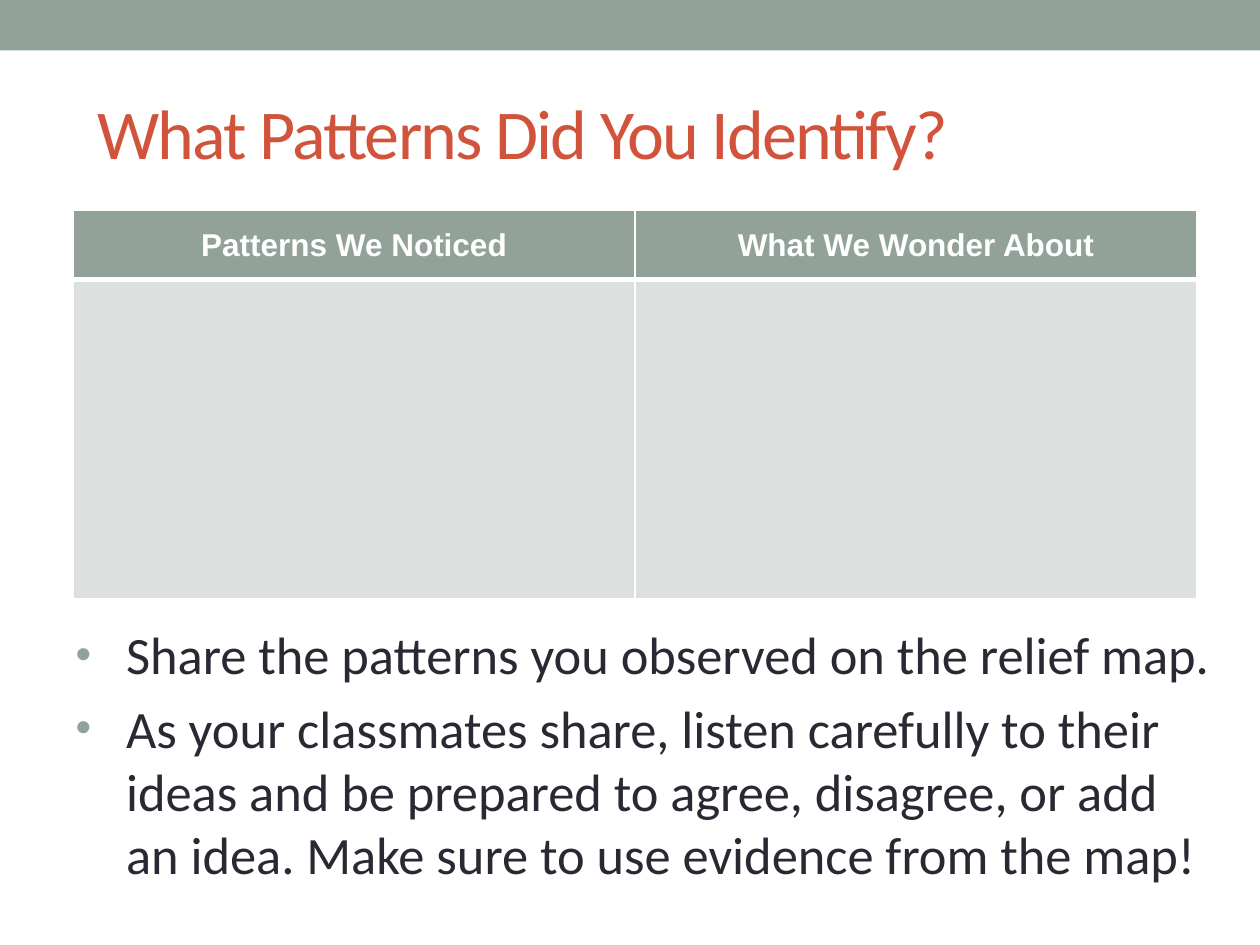
from lxml.etree import SubElement
from pptx import Presentation
from pptx.dml.color import RGBColor
from pptx.enum.shapes import MSO_SHAPE
from pptx.enum.text import MSO_ANCHOR, MSO_AUTO_SIZE, PP_ALIGN
from pptx.oxml import parse_xml
from pptx.oxml.ns import nsdecls, qn
from pptx.util import Inches, Pt

SAGE = RGBColor(0x93, 0xA2, 0x99)
PALE = RGBColor(0xDC, 0xE0, 0xDE)
RUST = RGBColor(0xD2, 0x53, 0x3C)
INK = RGBColor(0x29, 0x29, 0x34)
WHITE = RGBColor(0xFF, 0xFF, 0xFF)

HEADS = ["Patterns We Noticed", "What We Wonder About"]
TASKS = [
    "Share the patterns you observed on the relief map.",
    "As your classmates share, listen carefully to their ideas and be prepared "
    "to agree, disagree, or add an idea. Make sure to use evidence from the map!",
]


def write(para, text, font="Calibri", size=30, color=INK, bold=False,
          align=PP_ALIGN.LEFT, track=0, before=0):
    para.alignment = align
    para.space_before = Pt(before)
    run = para.add_run()
    run.text = text
    run.font.name = font
    run.font.size = Pt(size)
    run.font.bold = bold
    run.font.color.rgb = color
    if track:
        run.font._element.set("spc", str(track * 100))


def place(shape, box):
    shape.left, shape.top, shape.width, shape.height = map(Inches, box)


def bullet(para, indent):
    props = para._p.get_or_add_pPr()
    props.set("marL", str(Inches(indent)))
    props.set("indent", str(-Inches(indent)))
    tint = SubElement(props, qn("a:buClr"))
    SubElement(tint, qn("a:srgbClr"), val=str(SAGE))
    SubElement(props, qn("a:buSzPct"), val="85000")
    SubElement(props, qn("a:buFont"), typeface="Arial")
    SubElement(props, qn("a:buChar"), char="•")


def border(cell, sides):
    props = cell._tc.get_or_add_tcPr()
    for spot, (side, width) in enumerate(sides.items()):
        props.insert(spot, parse_xml(
            f'<a:ln{side} {nsdecls("a")} w="{Pt(width)}"><a:solidFill>'
            f'<a:srgbClr val="{WHITE}"/></a:solidFill></a:ln{side}>'))


def add_band(slide, box):
    band = slide.shapes.add_shape(MSO_SHAPE.RECTANGLE, *map(Inches, box))
    band.shadow.inherit = False
    band.fill.solid()
    band.fill.fore_color.rgb = SAGE
    band.line.fill.background()


def add_title(slide, box):
    title = slide.shapes.title
    place(title, box)
    frame = title.text_frame
    frame.auto_size = MSO_AUTO_SIZE.NONE
    frame.vertical_anchor = MSO_ANCHOR.MIDDLE
    write(frame.paragraphs[0], "What Patterns Did You Identify?",
          size=40, color=RUST, track=-1)


def add_chart_grid(slide, box, head):
    left, top, width, height = box
    grid = slide.shapes.add_table(2, len(HEADS), *map(Inches, box)).table
    grid.first_row = grid.horz_banding = False
    for col in grid.columns:
        col.width = Inches(width / len(HEADS))
    for row, tall in zip(grid.rows, (head, height - head)):
        row.height = Inches(tall)
    for col, text in enumerate(HEADS):
        top_cell, low_cell = grid.cell(0, col), grid.cell(1, col)
        for cell, fill in ((top_cell, SAGE), (low_cell, PALE)):
            cell.fill.solid()
            cell.fill.fore_color.rgb = fill
        border(top_cell, {"L": 1, "R": 1, "T": 1, "B": 3})
        border(low_cell, {"L": 1, "R": 1, "T": 3, "B": 1})
        top_cell.vertical_anchor = MSO_ANCHOR.MIDDLE
        write(top_cell.text_frame.paragraphs[0], text, font="Arial", size=18,
              color=WHITE, bold=True, align=PP_ALIGN.CENTER)


def add_tasks(slide, box):
    body = slide.placeholders[1]
    place(body, box)
    frame = body.text_frame
    frame.auto_size = MSO_AUTO_SIZE.NONE
    for spot, text in enumerate(TASKS):
        para = frame.add_paragraph() if spot else frame.paragraphs[0]
        write(para, text, before=6 if spot else 0)
        bullet(para, 0.4)


def main():
    deck = Presentation()
    deck.slide_width, deck.slide_height = Inches(10), Inches(7.5)
    slide = deck.slides.add_slide(deck.slide_layouts[1])
    # Top band and title
    add_band(slide, (0, 0, 10, 0.4))
    add_title(slide, (0.67, 0.5, 8.83, 1.08))
    # Table to fill in, then the instructions
    add_chart_grid(slide, (0.58, 1.67, 8.92, 3.08), head=0.55)
    add_tasks(slide, (0.5, 4.89, 9.25, 2.44))
    deck.save("out.pptx")


if __name__ == "__main__":
    main()
